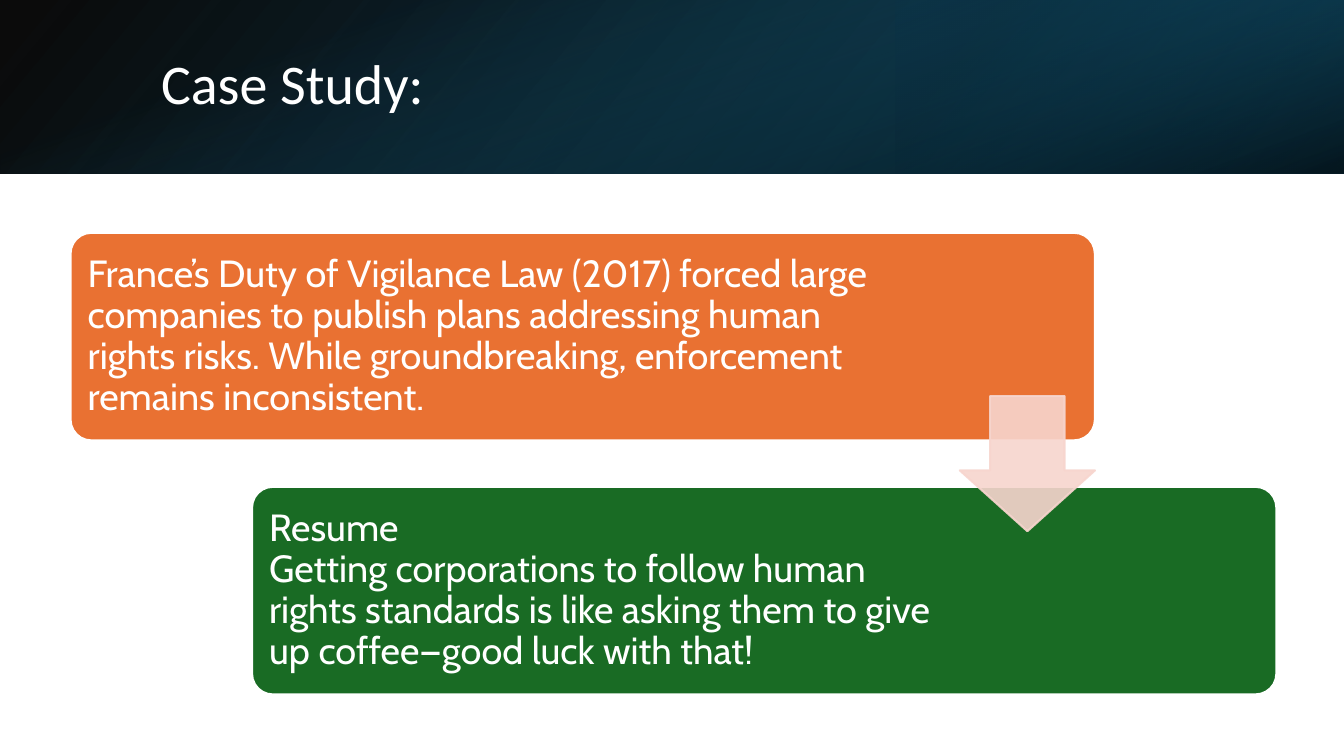
from lxml.etree import SubElement
from pptx import Presentation
from pptx.dml.color import RGBColor
from pptx.enum.shapes import MSO_SHAPE as Shape
from pptx.enum.text import MSO_ANCHOR as Anchor
from pptx.oxml.ns import qn
from pptx.util import Inches, Pt

COLORS = {
    "black": "000000", "navy": "104862", "deep": "0B3041", "teal": "156082",
    "white": "FFFFFF", "orange": "E97132", "green": "196B24", "pink": "F7D5CE",
}
SLIDE_WIDTH, SLIDE_HEIGHT = 13.33, 7.5
CARD_WIDTH, CARD_HEIGHT, CARD_PAD = 10.16, 2.06, 0.06
CARDS = [
    (0.7, 2.31, 8.03, "orange",
     "France’s Duty of Vigilance Law (2017) forced large companies to publish plans "
     "addressing human rights risks. While groundbreaking, enforcement remains inconsistent."),
    (2.5, 4.83, 6.9, "green",
     "Resume\nGetting corporations to follow human rights standards is like asking them "
     "to give up coffee—good luck with that!"),
]


def color(name):
    return RGBColor.from_string(COLORS[name])


def set_alphas(shape, alphas):
    """Set the opacity in percent of each colour of the shape, in order."""
    for node, alpha in zip(shape.element.spPr.iter(qn("a:srgbClr")), alphas):
        SubElement(node, qn("a:alpha")).set("val", str(alpha * 1000))


def add_plain_shape(page, kind, box, adjustments=()):
    shape = page.shapes.add_shape(kind, *map(Inches, box))
    shape.shadow.inherit = False
    for index, value in enumerate(adjustments):
        shape.adjustments[index] = value
    return shape


def fill_and_outline(shape, name):
    shape.fill.solid()
    shape.fill.fore_color.rgb = color(name)
    shape.line.width = Pt(1.5)


def add_text(page, box, text, font, size, margins):
    frame = page.shapes.add_textbox(*map(Inches, box)).text_frame
    layout = {"word_wrap": True, "vertical_anchor": Anchor.MIDDLE}
    layout |= {f"margin_{side}": Inches(value) for side, value in margins.items()}
    for name, value in layout.items():
        setattr(frame, name, value)
    para = frame.paragraphs[0]
    para.text = text
    para.line_spacing = 0.9
    for span in para.runs:
        for name, value in {"name": font, "size": Pt(size)}.items():
            setattr(span.font, name, value)
        span.font.color.rgb = color("white")


def add_gradient(page, box, stops, angle, rotation=0, flipped=False):
    """Add a rectangle whose stops are (position, colour, opacity), angle clockwise."""
    shape = add_plain_shape(page, Shape.RECTANGLE, box)
    shape.rotation = rotation
    if flipped:
        shape.element.spPr.xfrm.set("flipH", "1")
    shape.line.fill.background()
    shape.fill.gradient()
    shape.fill.gradient_angle = 360 - angle
    for stop, (position, name, _) in zip(shape.fill.gradient_stops, stops):
        stop.position = position / 100
        stop.color.rgb = color(name)
    set_alphas(shape, [alpha for _, _, alpha in stops])


def add_header(page, left, top, width, height):
    add_gradient(page, (left, top, width, height),
                 [(0, "black", 96), (100, "navy", 100)], 140, flipped=True)
    third = width / 3
    add_gradient(page, (left + 2 * third, top, third, height),
                 [(19, "deep", 68), (100, "teal", 79)], 320, rotation=180, flipped=True)
    # A quarter turn about its centre lays this tall rectangle over the band.
    shift = (width - height) / 2
    add_gradient(page, (left + shift, top - shift, height, width),
                 [(23, "teal", 0), (99, "black", 74)], 340, rotation=90)
    add_text(page, (left + 1.5, top + 0.38, 10.98, 0.96), "Case Study:", "Calibri", 40,
             {"left": 0.1, "right": 0.1, "top": 0.05, "bottom": 0.05})


def add_card(page, left, top, text_width, name, text):
    card = add_plain_shape(page, Shape.ROUNDED_RECTANGLE,
                           (left, top, CARD_WIDTH, CARD_HEIGHT), [0.1])
    fill_and_outline(card, name)
    card.line.color.rgb = color("white")
    add_text(page, (left + CARD_PAD, top + CARD_PAD, text_width, CARD_HEIGHT - 2 * CARD_PAD),
             text, "Cabin", 27, dict.fromkeys(("left", "right", "top", "bottom"), 0.11))


def add_arrow(page, left, top, size):
    arrow = add_plain_shape(page, Shape.DOWN_ARROW, (left, top, size, size), [0.45, 0.55])
    # The preset takes the shaft width first and the head length second.
    arrow.adjustments[0], arrow.adjustments[1] = 0.55, 0.45
    fill_and_outline(arrow, "pink")
    arrow.line.color.rgb = color("pink")
    set_alphas(arrow, [90, 90])


def main():
    deck = Presentation()
    deck.slide_width, deck.slide_height = Inches(SLIDE_WIDTH), Inches(SLIDE_HEIGHT)
    page = deck.slides.add_slide(deck.slide_layouts[6])
    add_header(page, 0, 0, SLIDE_WIDTH, 1.72)
    for card in CARDS:
        add_card(page, *card)
    add_arrow(page, 9.52, 3.93, 1.34)
    deck.save("out.pptx")


if __name__ == "__main__":
    main()
